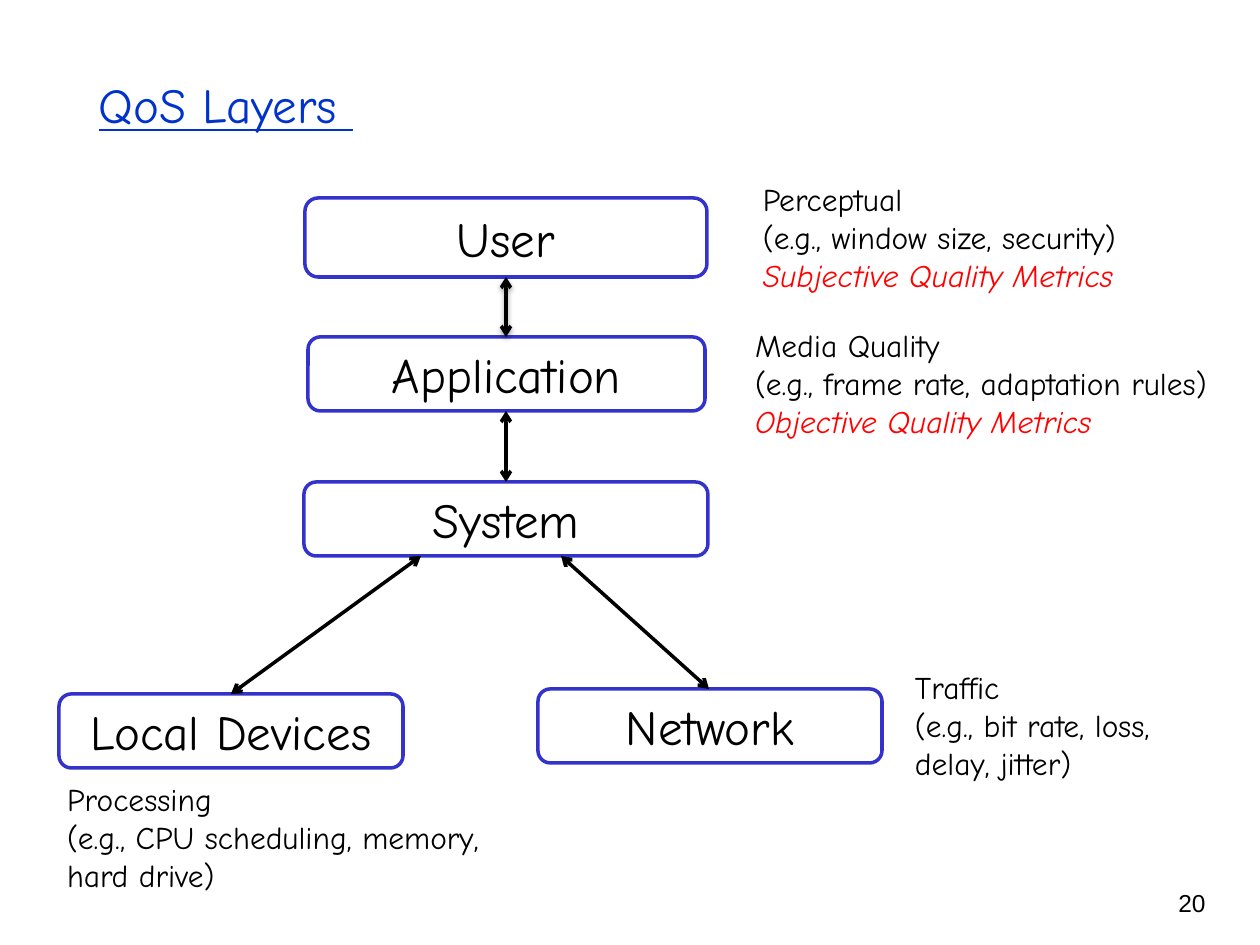
from lxml import etree
from pptx import Presentation
from pptx import util as u
from pptx.dml.color import RGBColor
from pptx.enum import shapes, text
from pptx.oxml.ns import qn

# Content: all lengths in px, 126 to the inch
COLORS = {"title": "0033CC", "border": "3333CC", "ink": "000000",
          "metric": "FF0000", "fill": "FFFFFF"}
FONT = "Comic Neue"
TITLE = ("QoS Layers ", (86, 25, 1071, 158))
PAGE = ("20", (1125, 882, 93, 63))
LAYERS = {
    "User": (305, 198, 402, 79),
    "Application": (308, 337, 397, 74),
    "System": (304, 482, 404, 74),
    "Local Devices": (59, 694, 344, 74),
    "Network": (538, 689, 344, 74),
}
# upper layer, x there, lower layer, x there, has shadow
LINKS = [
    ("User", 506, "Application", 506, True),
    ("Application", 506, "System", 506, False),
    ("System", 561, "Network", 709, False),
    ("System", 421, "Local Devices", 231, False),
]
# lines, metric in red italics, box, side inset, bottom inset
NOTES = [
    (["Perceptual", "(e.g., window size, security)"],
     "Subjective Quality Metrics", (750, 180, 442, 121), 13, 6),
    (["Media Quality", "(e.g., frame rate, adaptation rules)"],
     "Objective Quality Metrics", (742, 326, 484, 159), 13, 6),
    (["Traffic", "(e.g., bit rate, loss,", "delay, jitter)"],
     None, (902, 668, 315, 159), 13, 6),
    (["Processing", "(e.g., CPU scheduling, memory, hard drive)"],
     None, (67, 780, 459, 152), 0, 0),
]


def px(n):
    return u.Emu(round(n * 914400 / 126))


def rgb(name):
    return RGBColor.from_string(COLORS[name])


def style(p, size, color="ink", font=FONT, align=text.PP_ALIGN.LEFT):
    p.alignment = align
    p.font.name, p.font.size = font, u.Pt(size)
    p.font.color.rgb = rgb(color)


def add_text(box):
    tf = s.shapes.add_textbox(*map(px, box)).text_frame
    tf.word_wrap = True
    return tf


def add_layer(name, box):
    sp = s.shapes.add_shape(shapes.MSO_SHAPE.ROUNDED_RECTANGLE, *map(px, box))
    sp.shadow.inherit = False
    sp.fill.solid()
    sp.fill.fore_color.rgb = rgb("fill")
    sp.line.color.rgb = rgb("border")
    sp.line.width = u.Pt(2)
    tf = sp.text_frame
    tf.word_wrap = False
    tf.vertical_anchor = text.MSO_ANCHOR.MIDDLE
    tf.text = name
    style(tf.paragraphs[0], 28, align=text.PP_ALIGN.CENTER)


def add_link(upper, x1, lower, x2, shadow):
    top, height = LAYERS[upper][1], LAYERS[upper][3]
    c = s.shapes.add_connector(shapes.MSO_CONNECTOR.STRAIGHT, px(x1),
                               px(top + height), px(x2), px(LAYERS[lower][1]))
    c.line.color.rgb = rgb("ink")
    c.line.width = u.Pt(2)
    ln = c.line._get_or_add_ln()
    for end in ("a:headEnd", "a:tailEnd"):
        etree.SubElement(ln, qn(end), type="arrow")
    effects = etree.SubElement(c._element.spPr, qn("a:effectLst"))
    if shadow:
        shd = etree.SubElement(effects, qn("a:outerShdw"), dir="5400000",
                               blurRad=str(u.Pt(3)), dist=str(u.Pt(1.6)))
        ink = etree.SubElement(shd, qn("a:srgbClr"), val=COLORS["ink"])
        etree.SubElement(ink, qn("a:alpha"), val="38000")


def add_note(lines, metric, box, side, bottom):
    tf = add_text(box)
    tf.margin_left = tf.margin_right = px(side)
    tf.margin_top, tf.margin_bottom = 0, px(bottom)
    tf.text = "\n".join(lines + [metric] if metric else lines)
    for p in tf.paragraphs:
        style(p, 18)
    if metric:
        style(p, 18, "metric")
        p.font.italic = True


prs = Presentation()
prs.slide_width, prs.slide_height = u.Inches(10), u.Inches(7.5)
s = prs.slides.add_slide(prs.slide_layouts[5])

# Title
title = s.shapes.title
title.left, title.top, title.width, title.height = map(px, TITLE[1])
tf = title.text_frame
tf.text = TITLE[0]
tf.auto_size = text.MSO_AUTO_SIZE.NONE
tf.vertical_anchor = text.MSO_ANCHOR.MIDDLE
style(tf.paragraphs[0], 28, "title")
tf.paragraphs[0].font.underline = True

# Page number
tf = add_text(PAGE[1])
tf.text = PAGE[0]
style(tf.paragraphs[0], 14, font="Arial", align=text.PP_ALIGN.RIGHT)

# Layer diagram and notes
for name, box in LAYERS.items():
    add_layer(name, box)
for link in LINKS:
    add_link(*link)
for note in NOTES:
    add_note(*note)

prs.save("out.pptx")
